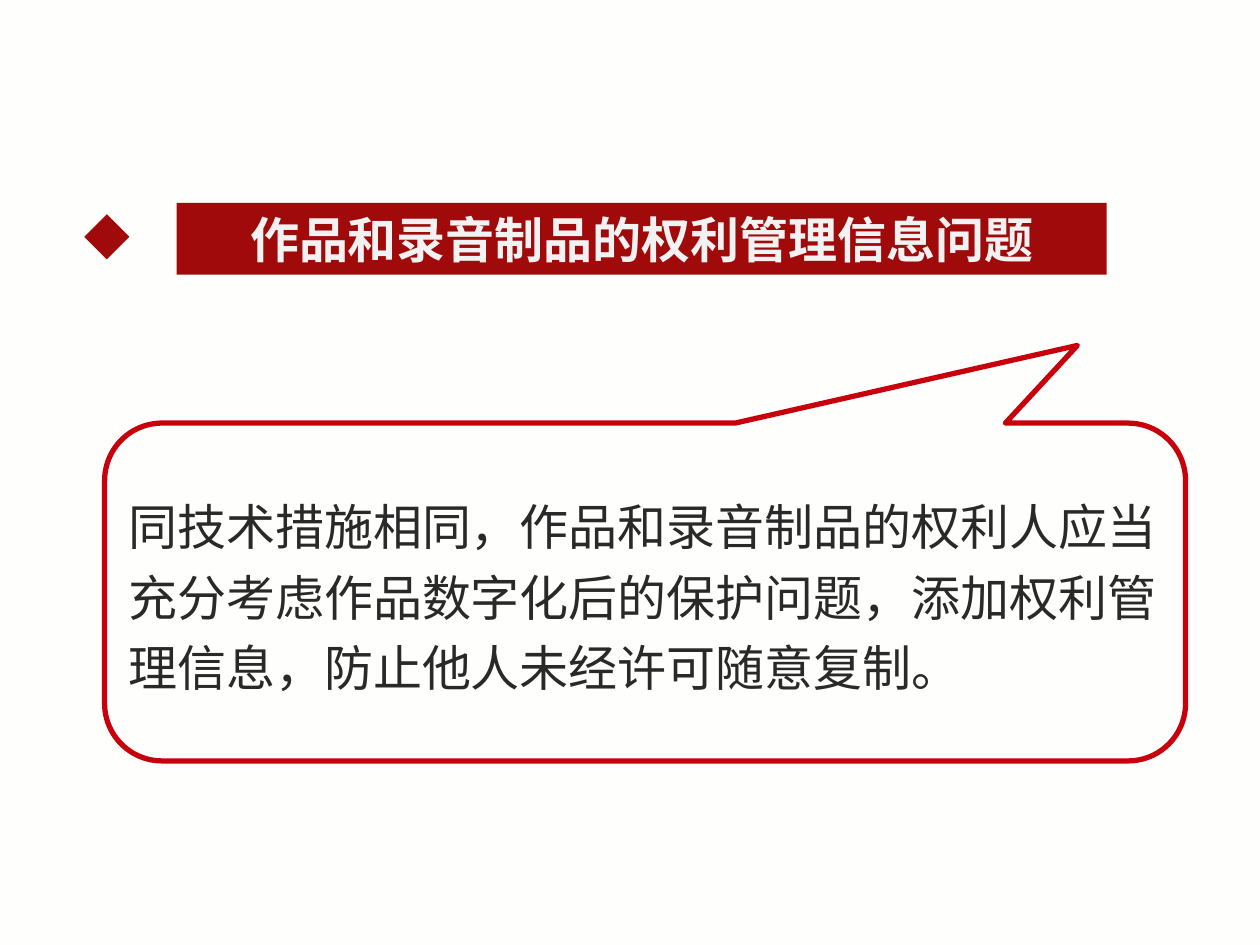
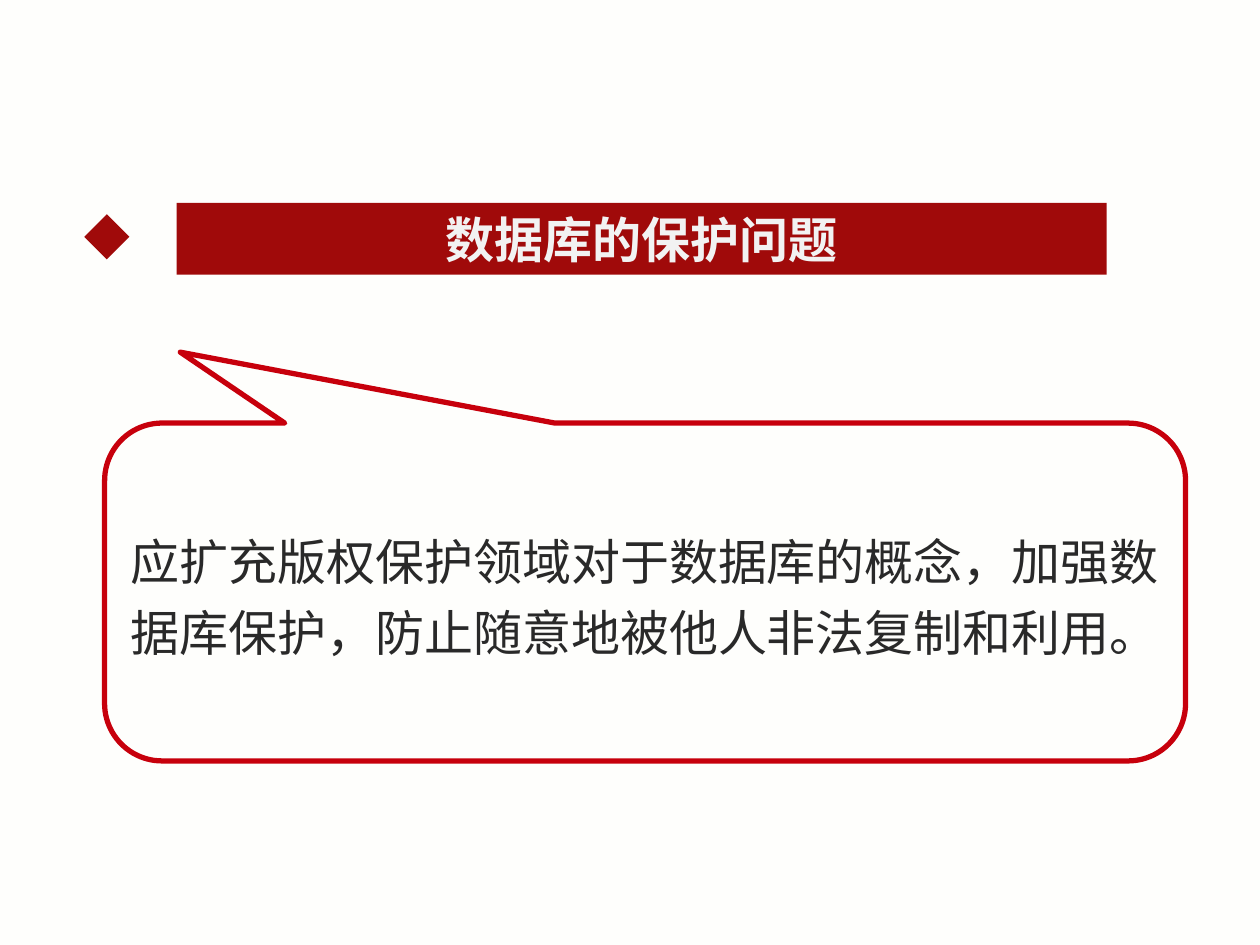
from dataclasses import dataclass

from lxml import etree
from pptx import Presentation
from pptx.dml.color import RGBColor
from pptx.enum.shapes import MSO_SHAPE
from pptx.enum.text import MSO_ANCHOR, MSO_AUTO_SIZE, PP_ALIGN
from pptx.oxml.ns import qn
from pptx.util import Cm, Pt

RECT = MSO_SHAPE.RECTANGLE
DIAMOND = MSO_SHAPE.DIAMOND
CALLOUT = MSO_SHAPE.ROUNDED_RECTANGULAR_CALLOUT
MIDDLE = MSO_ANCHOR.MIDDLE
GROW = MSO_AUTO_SIZE.SHAPE_TO_FIT_TEXT
CENTER = PP_ALIGN.CENTER

# tail: tip of the callout, as shares of its size from its centre
# box: left, top, width, height of the body text in cm
PAGES = [
    {
        "title": "作品和录音制品的权利管理信息问题",
        "body": "同技术措施相同，作品和录音制品的权利人应当充分考虑作品数字化后的保护问题，"
                "添加权利管理信息，防止他人未经许可随意复制。",
        "tail": (0.4, -0.73),
        "box": (2.34, 9.65, 21.56, 4.37),
    },
    {
        "title": "数据库的保护问题",
        "body": "应扩充版权保护领域对于数据库的概念，加强数据库保护，"
                "防止随意地被他人非法复制和利用。",
        "tail": (-0.43, -0.71),
        "box": (2.39, 10.36, 21.56, 3.12),
    },
]

BAND = (3.56, 4.09, 18.75, 1.45)
GEM = (1.7, 4.32, 0.91, 0.91)
BUBBLE = (2.11, 8.53, 21.79, 6.81)
ROUND = 0.17
NOTCH = 2.54  # left end of the chevron's outer edge
THICK = 0.15  # offset between the chevron's two edges


@dataclass(frozen=True)
class Theme:
    paper: RGBColor = RGBColor.from_string("FEFEFC")
    band: RGBColor = RGBColor.from_string("A00A0A")
    line: RGBColor = RGBColor.from_string("C7000C")
    light: RGBColor = RGBColor.from_string("F2F2F2")
    ink: RGBColor = RGBColor.from_string("292929")
    font: str = "Noto Sans CJK SC"
    size: Pt = Pt(28)
    rule: Pt = Pt(3)


THEME = Theme()


def place(box):
    return [Cm(n) for n in box]


def paint(shape, color):
    shape.shadow.inherit = False
    shape.fill.solid()
    shape.fill.fore_color.rgb = color
    shape.line.fill.background()


def write(shape, text, color, bold=False):
    frame = shape.text_frame
    frame.word_wrap = True
    frame.auto_size = GROW
    para = frame.paragraphs[0]
    para.text = text
    font = para.font
    font.name, font.size, font.bold = THEME.font, THEME.size, bold
    font.color.rgb = color
    latin = para._p.pPr.find(qn("a:defRPr")).find(qn("a:latin"))
    asian = etree.Element(qn("a:ea"), typeface=THEME.font)
    latin.addnext(asian)
    return para


def add_head(slide, title):
    band = slide.shapes.add_shape(RECT, *place(BAND))
    paint(band, THEME.band)
    band.text_frame.vertical_anchor = MIDDLE
    write(band, title, THEME.light, True).alignment = CENTER


def add_mark(slide):
    """Add the diamond with a paper-coloured chevron beside it."""
    group = slide.shapes.add_group_shape().shapes
    paint(group.add_shape(DIAMOND, *place(GEM)), THEME.band)
    top, size = GEM[1], GEM[3]
    half, mid, end = size / 2, top + size / 2, top + size
    inner = NOTCH - THICK
    points = [
        (NOTCH, top), (NOTCH + half, mid), (NOTCH, end),
        (inner, end - THICK), (inner + half - THICK, mid), (inner, top + THICK),
    ]
    points = [place(point) for point in points]
    path = group.build_freeform(*points[0])
    path.add_line_segments(points[1:], close=True)
    paint(path.convert_to_shape(), THEME.paper)


def add_note(slide, page):
    bubble = slide.shapes.add_shape(CALLOUT, *place(BUBBLE))
    bubble.shadow.inherit = False
    bubble.fill.background()
    bubble.line.color.rgb = THEME.line
    bubble.line.width = THEME.rule
    for i, value in enumerate((*page["tail"], ROUND)):
        bubble.adjustments[i] = value
    box = slide.shapes.add_textbox(*place(page["box"]))
    write(box, page["body"], THEME.ink).line_spacing = 1.2


def main():
    deck = Presentation()
    deck.slide_width, deck.slide_height = Cm(25.4), Cm(19.05)
    blank = deck.slide_layouts[6]
    for page in PAGES:
        slide = deck.slides.add_slide(blank)
        fill = slide.background.fill
        fill.solid()
        fill.fore_color.rgb = THEME.paper
        add_head(slide, page["title"])
        add_mark(slide)
        add_note(slide, page)
    deck.save("out.pptx")


if __name__ == "__main__":
    main()
